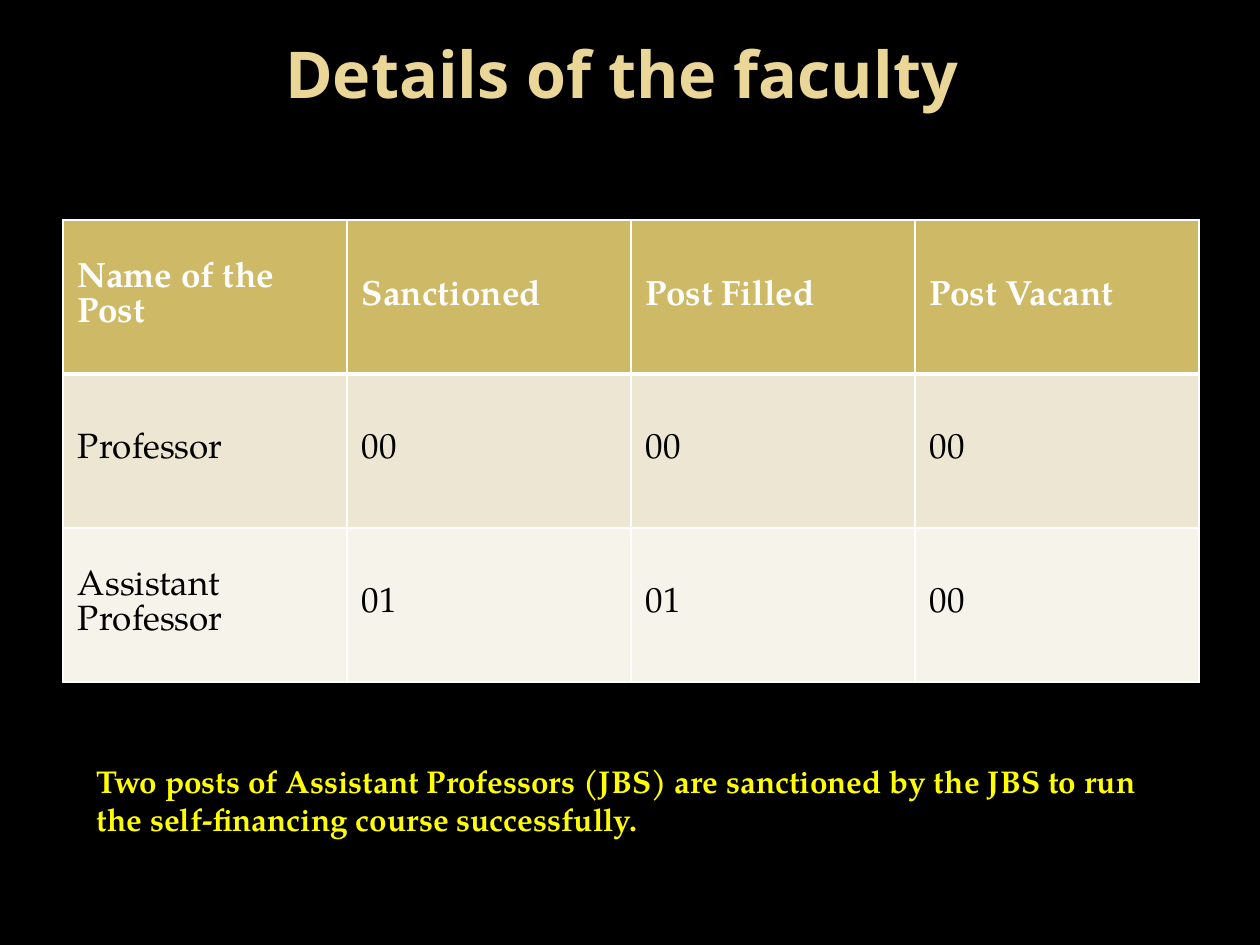
"""Build the faculty details slide: a title, a table of posts and a note."""
from lxml.etree import SubElement
from pptx import Presentation
from pptx.dml.color import RGBColor
from pptx.enum.text import MSO_ANCHOR, PP_ALIGN
from pptx.oxml.ns import qn
from pptx.util import Pt

PX = 914400 // 126
COLOURS = {
    "background": "000000", "title": "EAD696", "note": "FFFF00",
    "border": "FFFFFF", "header_text": "FFFFFF", "body_text": "000000",
}
ROW_FILLS = ["CEB966", "EDE6D3", "F6F3EA"]
TITLE = "Details of the faculty"
POSTS = [
    ["Name of the Post", "Sanctioned", "Post Filled", "Post Vacant"],
    ["Professor", "00", "00", "00"],
    ["Assistant Professor", "01", "01", "00"],
]
NOTE = ("Two posts of Assistant Professors (JBS) are sanctioned by the JBS "
        "to run the self-financing course successfully.")
TITLE_FONT = {"name": "Noto Sans", "size": Pt(36.9), "bold": True}
NOTE_FONT = {"name": "TeX Gyre Pagella", "size": Pt(18), "bold": True}
CELL_FONT = {"name": "TeX Gyre Pagella", "size": Pt(20)}
CELL_FORMAT = {"line_spacing": Pt(20), "space_after": Pt(20)}
CELL_MARGINS = {f"margin_{side}": 15 * PX for side in ("left", "top", "right", "bottom")}
TITLE_FRAME = {"margin_left": 12 * PX, "margin_right": 28 * PX, "margin_top": 0}
TABLE_LEFT, TABLE_TOP, COLUMN_WIDTH, ROW_HEIGHT = 63, 220, 284, 154


def set_all(target, values):
    """Set every named attribute of the target."""
    for name, value in values.items():
        setattr(target, name, value)


def write(frame, text, font, colour, **paragraph_format):
    """Put one formatted run into the text frame."""
    para = frame.paragraphs[0]
    set_all(para, paragraph_format)
    span = para.add_run()
    span.text = text
    set_all(span.font, font)
    span.font.color.rgb = RGBColor.from_string(COLOURS[colour])


def add_text(page, place, text, font, colour, frame_format, **paragraph_format):
    """Add a wrapping text box at a place given in px."""
    box = page.shapes.add_textbox(*(length * PX for length in place))
    set_all(box.text_frame, {"word_wrap": True, **frame_format})
    write(box.text_frame, text, font, colour, **paragraph_format)


def add_borders(cell, widths):
    """Draw the cell borders, with widths in points by side."""
    properties = cell._tc.get_or_add_tcPr()
    for position, (side, width) in enumerate(widths.items()):
        line = properties.makeelement(qn(f"a:ln{side}"), {"w": str(Pt(width))})
        fill = SubElement(line, qn("a:solidFill"))
        SubElement(fill, qn("a:srgbClr"), val=COLOURS["border"])
        properties.insert(position, line)


def add_posts(page):
    """Add the table of posts."""
    row_count, column_count = len(POSTS), len(POSTS[0])
    table = page.shapes.add_table(
        row_count, column_count, TABLE_LEFT * PX, TABLE_TOP * PX,
        COLUMN_WIDTH * column_count * PX, ROW_HEIGHT * row_count * PX).table
    table.horz_banding = False
    for row_index, (texts, fill) in enumerate(zip(POSTS, ROW_FILLS)):
        header = row_index == 0
        font = {**CELL_FONT, "bold": header}
        colour = "header_text" if header else "body_text"
        widths = {"L": 1, "R": 1, "T": 3 if row_index == 1 else 1, "B": 3 if header else 1}
        for column_index, text in enumerate(texts):
            cell = table.cell(row_index, column_index)
            set_all(cell, {"vertical_anchor": MSO_ANCHOR.MIDDLE, **CELL_MARGINS})
            cell.fill.solid()
            cell.fill.fore_color.rgb = RGBColor.from_string(fill)
            write(cell.text_frame, text, font, colour, **CELL_FORMAT)
            add_borders(cell, widths)


def main():
    """Build and save the deck."""
    deck = Presentation()
    deck.slide_width, deck.slide_height = 1260 * PX, 945 * PX
    page = deck.slides.add_slide(deck.slide_layouts[6])
    page.background.fill.solid()
    page.background.fill.fore_color.rgb = RGBColor.from_string(COLOURS["background"])
    add_text(page, (63, 34, 1134, 157), TITLE, TITLE_FONT, "title",
             TITLE_FRAME, alignment=PP_ALIGN.CENTER)
    add_posts(page)
    add_text(page, (84, 756, 1071, 89), NOTE, NOTE_FONT, "note", {})
    deck.save("out.pptx")


if __name__ == "__main__":
    main()
